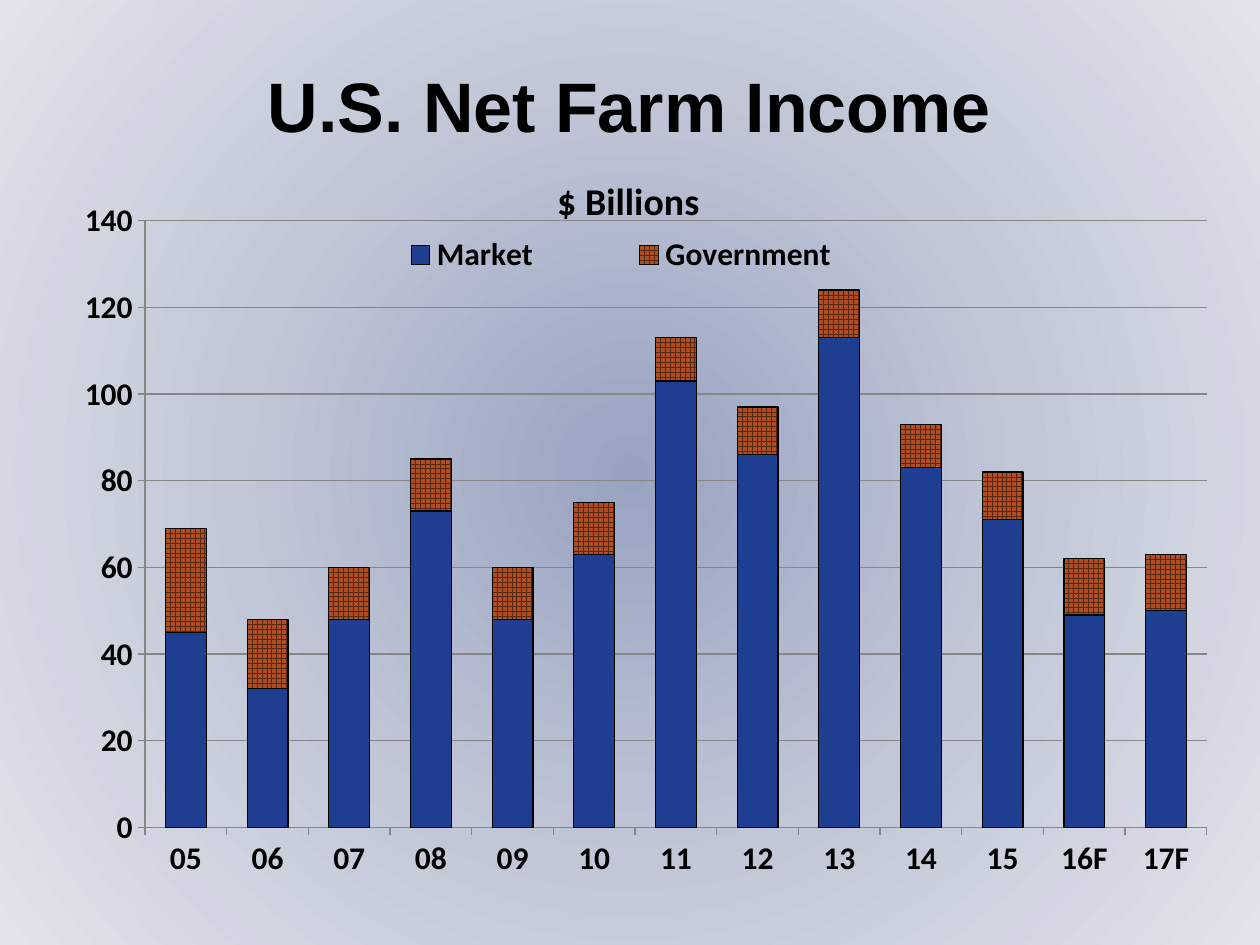
from pptx import Presentation
from pptx import oxml, util as u
from pptx.chart.data import CategoryChartData
from pptx.dml.color import RGBColor
from pptx.enum import chart as ch, dml, text
from pptx.oxml import ns

BLACK, GREY = "000000", "868686"
YEARS = ["05", "06", "07", "08", "09", "10", "11", "12", "13", "14", "15", "16F", "17F"]
MARKET = [45, 32, 48, 73, 48, 63, 103, 86, 113, 83, 71, 49, 50]
GOVERNMENT = [24, 16, 12, 12, 12, 12, 10, 11, 11, 10, 11, 13, 13]


def rgb(color):
    return RGBColor.from_string(color)


def set_font(font, name, size, bold=True):
    font.name, font.size, font.bold = name, u.Pt(size), bold
    font.color.rgb = rgb(BLACK)


def set_line(line, color, width=0.75):
    line.color.rgb = rgb(color)
    line.width = u.Pt(width)


def set_layout(element, index, x, y, w=None, h=None, inner=False):
    """Place a chart part, in percent of the chart area."""
    for old in element.xpath("./c:layout"):
        element.remove(old)
    tags = [("layoutTarget", "inner")] if inner else []
    tags += [("xMode", "edge"), ("yMode", "edge")]
    tags += [(k, v / 100) for k, v in zip("xywh", (x, y, w, h)) if v is not None]
    body = "".join(f'<c:{k} val="{v}"/>' for k, v in tags)
    element.insert(index, oxml.parse_xml(
        f'<c:layout {ns.nsdecls("c")}><c:manualLayout>{body}</c:manualLayout></c:layout>'))


class Deck:
    def __init__(self, width, height):
        self.prs = Presentation()
        self.prs.slide_width, self.prs.slide_height = u.Inches(width), u.Inches(height)
        self.s = self.prs.slides.add_slide(self.prs.slide_layouts[5])

    def background(self, stops):
        """Fill the slide with a circular gradient of (percent, colour) stops."""
        self.s.background.fill.solid()
        solid = self.s.element.xpath(".//p:bgPr/a:solidFill")[0]
        gs = "".join(f'<a:gs pos="{pos * 1000}"><a:srgbClr val="{color}"/></a:gs>'
                     for pos, color in stops)
        solid.getparent().replace(solid, oxml.parse_xml(
            f'<a:gradFill {ns.nsdecls("a")} rotWithShape="1"><a:gsLst>{gs}</a:gsLst>'
            '<a:path path="circle"><a:fillToRect l="50000" t="50000" r="50000" b="50000"/>'
            '</a:path></a:gradFill>'))

    def title(self, wording, x, y, w, h):
        sp = self.s.shapes.title
        sp.left, sp.top, sp.width, sp.height = map(u.Inches, (x, y, w, h))
        tf = sp.text_frame
        tf.text = wording
        tf.vertical_anchor = text.MSO_ANCHOR.MIDDLE
        p = tf.paragraphs[0]
        p.alignment = text.PP_ALIGN.CENTER
        set_font(p.font, "Arial", 40)

    def stacked_columns(self, heading, categories, series, x, y, w, h):
        data = CategoryChartData()
        data.categories = categories
        for name, values in series:
            data.add_series(name, values)
        chart = self.s.shapes.add_chart(ch.XL_CHART_TYPE.COLUMN_STACKED,
                                        *map(u.Inches, (x, y, w, h)), data).chart
        set_font(chart.font, "Calibri", 18)

        chart.has_title = True
        tf = chart.chart_title.text_frame
        tf.text = heading
        set_font(tf.paragraphs[0].font, "Calibri", 21.6)
        chart.chart_title.include_in_layout = False

        chart.has_legend = True
        chart.legend.position = ch.XL_LEGEND_POSITION.TOP
        chart.legend.include_in_layout = False

        plot = chart.plots[0]
        plot.gap_width, plot.overlap = 100, 100
        plot.vary_by_categories = False
        for ser in plot.series:
            set_line(ser.format.line, BLACK)
        return chart

    def save(self):
        self.prs.save("out.pptx")


def style_axes(chart, maximum, step):
    for axis in (chart.category_axis, chart.value_axis):
        axis.major_tick_mark = ch.XL_TICK_MARK.OUTSIDE
        axis.minor_tick_mark = ch.XL_TICK_MARK.NONE
        set_line(axis.format.line, GREY)
    chart.category_axis.tick_label_position = ch.XL_TICK_LABEL_POSITION.LOW
    axis = chart.value_axis
    axis.minimum_scale, axis.maximum_scale, axis.major_unit = 0, maximum, step
    axis.has_major_gridlines = True
    set_line(axis.major_gridlines.format.line, GREY)


def main():
    deck = Deck(10, 7.5)
    deck.background([(0, "98A3C1"), (50, "C2C7D7"), (100, "E1E4EB")])
    deck.title("U.S. Net Farm Income", 0.25, 0.33, 9.49, 1)
    chart = deck.stacked_columns(
        "$ Billions", YEARS, [("Market", MARKET), ("Government", GOVERNMENT)],
        0.25, 1.17, 9.49, 5.99)
    style_axes(chart, 140, 20)

    market, government = (ser.format.fill for ser in chart.plots[0].series)
    market.solid()
    market.fore_color.rgb = rgb("1E3E92")
    government.patterned()
    government.pattern = dml.MSO_PATTERN.LARGE_GRID
    government.fore_color.rgb = rgb("572711")
    government.back_color.rgb = rgb("AE4E22")

    part = {tag: chart.element.xpath(f"./c:chart/c:{tag}")[0]
            for tag in ("title", "legend", "plotArea")}
    set_layout(part["title"], 1, 43.4, 2.7)
    set_layout(part["legend"], 1, 23.7, 11.7, 51.2, 5)
    set_layout(part["plotArea"], 0, 9.5, 9.7, 88.8, 80.4, inner=True)
    deck.save()


if __name__ == "__main__":
    main()
